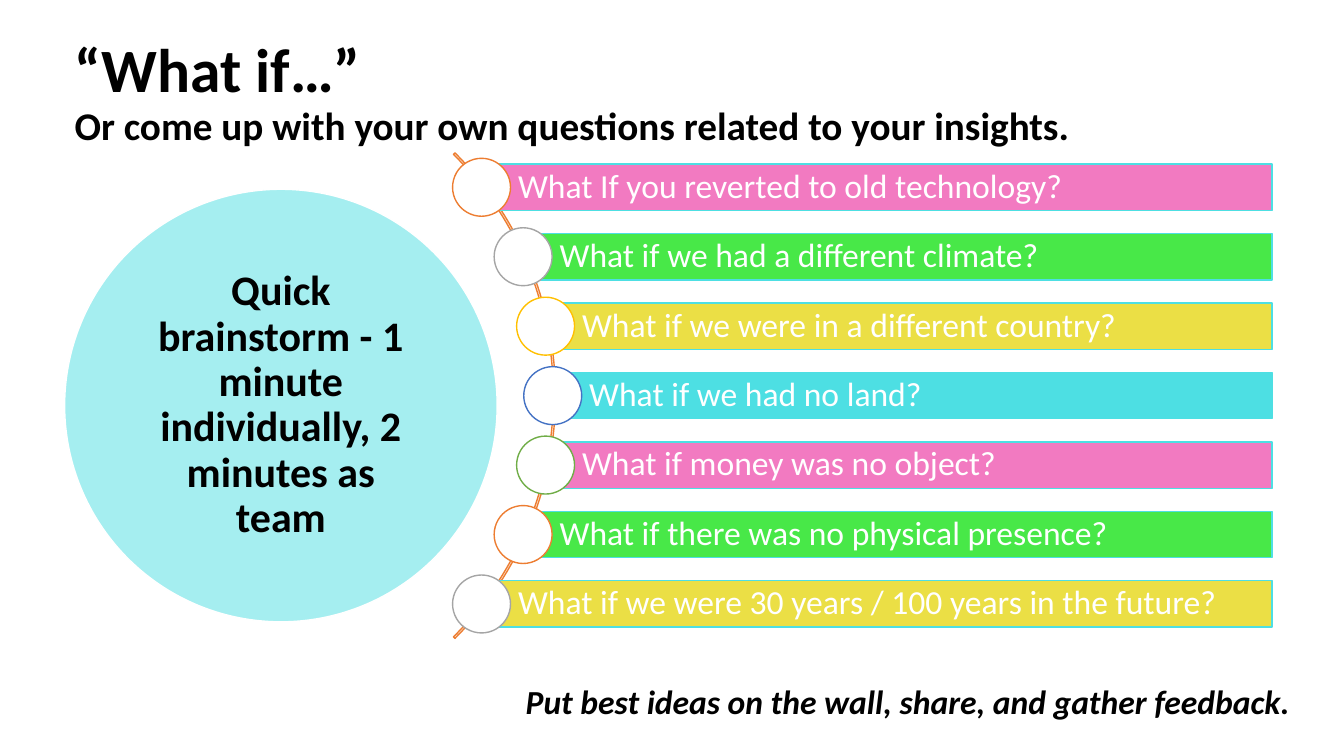
from dataclasses import dataclass
from math import sqrt

from lxml.etree import SubElement
from pptx import Presentation
from pptx.dml.color import RGBColor
from pptx.enum.shapes import MSO_SHAPE as Shape
from pptx.enum.text import MSO_ANCHOR as Anchor, PP_ALIGN as Align
from pptx.oxml.ns import qn
from pptx.util import Cm, Pt

TITLE = "“What if…”"
SUBTITLE = "Or come up with your own questions related to your insights."
TASK = "Quick brainstorm - 1 minute individually, 2 minutes as team"
CLOSING = "Put best ideas on the wall, share, and gather feedback."
QUESTIONS = [
    "What If you reverted to old technology?",
    "What if we had a different climate?",
    "What if we were in a different country?",
    "What if we had no land?",
    "What if money was no object?",
    "What if there was no physical presence?",
    "What if we were 30 years / 100 years in the future?",
]


@dataclass(frozen=True)
class Theme:
    font: str = "Calibri"
    black: str = "000000"
    white: str = "FFFFFF"
    cyan: str = "4DDFE3"
    arc: str = "ED7D31"
    bars: tuple = ("F27AC1", "48E848", "EBDF45", "4DDFE3")
    dots: tuple = ("ED7D31", "A5A5A5", "FFC000", "4472C4", "70AD47")
    title_size: int = 44
    subtitle_size: int = 28
    task_size: int = 30
    body_size: int = 24


THEME = Theme()

# Lengths in centimetres
ARC_X, ARC_Y, ARC_RADIUS = 5.35, 9.97, 8.65
DOT_RADIUS, DOT_ORBIT = 0.73, 8.58
BAR_HEIGHT, BAR_RIGHT, BAR_STEP = 1.17, 32.06, 1.75
TASK_X, TASK_Y, TASK_RADIUS = 7.08, 10.22, 5.45

deck = Presentation()
deck.slide_width, deck.slide_height = Cm(33.87), Cm(19.05)
page = deck.slides.add_slide(deck.slide_layouts[6])


def write(para, text, *, size, color=THEME.black, bold=False, italic=False):
    span = para.add_run()
    span.text = text
    font = span.font
    font.name, font.size = THEME.font, Pt(size)
    font.bold, font.italic = bold, italic
    font.color.rgb = RGBColor.from_string(color)


def prepare(shape, *, anchor=Anchor.TOP, align=Align.LEFT, spacing=1.0, insets=None):
    """Set up the text frame and return its first paragraph."""
    frame = shape.text_frame
    frame.word_wrap, frame.vertical_anchor = True, anchor
    if insets:
        (frame.margin_left, frame.margin_top,
         frame.margin_right, frame.margin_bottom) = map(Cm, insets)
    para = frame.paragraphs[0]
    para.alignment, para.line_spacing = align, spacing
    return para


def add_shape(kind, left, top, width, height, *, line, fill=None, opacity=None):
    shape = page.shapes.add_shape(kind, Cm(left), Cm(top), Cm(width), Cm(height))
    shape.shadow.inherit = False
    shape.line.color.rgb = RGBColor.from_string(line)
    shape.line.width = Pt(1)
    if fill is None:
        shape.fill.background()
    else:
        shape.fill.solid()
        shape.fill.fore_color.rgb = RGBColor.from_string(fill)
    if opacity is not None:
        color = shape._element.spPr.find(qn("a:solidFill"))[0]
        SubElement(color, qn("a:alpha"), val=str(opacity * 1000))
    return shape


def add_round(kind, x, y, radius, **style):
    """Add a shape centred on x, y."""
    return add_shape(kind, x - radius, y - radius, 2 * radius, 2 * radius, **style)


def add_box(left, top, width, height):
    return page.shapes.add_textbox(Cm(left), Cm(top), Cm(width), Cm(height))


def add_heading():
    para = prepare(add_box(1.63, 0.53, 29.2, 3.68), anchor=Anchor.MIDDLE, spacing=0.9)
    write(para, TITLE, size=THEME.title_size, bold=True)
    para.add_line_break()
    write(para, SUBTITLE, size=THEME.subtitle_size, bold=True)


def add_questions():
    arc = add_round(Shape.BLOCK_ARC, ARC_X, ARC_Y, ARC_RADIUS, line=THEME.arc)
    for index, value in enumerate((189, 27, 0.003)):
        arc.adjustments[index] = value
    for index, question in enumerate(QUESTIONS):
        rise = (index - (len(QUESTIONS) - 1) / 2) * BAR_STEP
        x, y = ARC_X + sqrt(DOT_ORBIT ** 2 - rise ** 2), ARC_Y + rise
        bar = add_shape(Shape.RECTANGLE, x, y - BAR_HEIGHT / 2, BAR_RIGHT - x, BAR_HEIGHT,
                        fill=THEME.bars[index % len(THEME.bars)], line=THEME.cyan)
        para = prepare(bar, anchor=Anchor.MIDDLE, spacing=0.9,
                       insets=(0.92, 0.17, 0.17, 0.17))
        write(para, question, size=THEME.body_size, color=THEME.white)
        add_round(Shape.OVAL, x, y, DOT_RADIUS, fill=THEME.white,
                  line=THEME.dots[index % len(THEME.dots)])


def add_task():
    circle = add_round(Shape.OVAL, TASK_X, TASK_Y, TASK_RADIUS,
                       fill=THEME.cyan, opacity=50, line=THEME.white)
    para = prepare(circle, anchor=Anchor.MIDDLE, align=Align.CENTER, spacing=0.9,
                   insets=(0.3,) * 4)
    write(para, TASK, size=THEME.task_size, bold=True)


def add_closing():
    para = prepare(add_box(2.64, 17.04, 30.12, 1.2), align=Align.RIGHT)
    write(para, CLOSING, size=THEME.body_size, bold=True, italic=True)


add_heading()
add_questions()
add_task()
add_closing()
deck.save("out.pptx")
